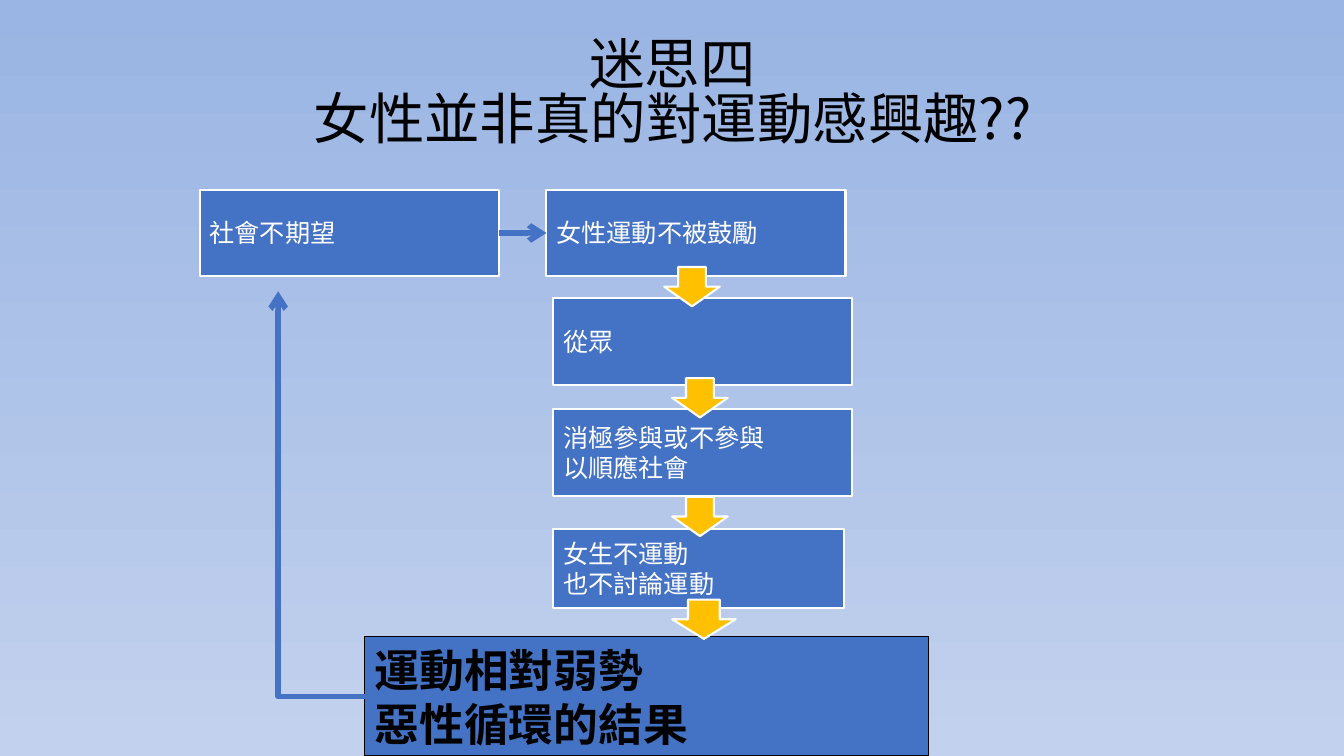
import pptx
import pptx.util
import pptx.dml.color
import pptx.enum.shapes
import pptx.enum.text
import pptx.oxml.ns
import lxml.etree

Cm = pptx.util.Cm
Pt = pptx.util.Pt
RGBColor = pptx.dml.color.RGBColor
Shape = pptx.enum.shapes.MSO_SHAPE
Connector = pptx.enum.shapes.MSO_CONNECTOR
Align = pptx.enum.text.PP_ALIGN
Anchor = pptx.enum.text.MSO_ANCHOR
qn = pptx.oxml.ns.qn

SKY_TOP = RGBColor(0x9A, 0xB5, 0xE4)
SKY_BOTTOM = RGBColor(0xC2, 0xD1, 0xED)
BLUE = RGBColor(0x44, 0x72, 0xC4)
GOLD = RGBColor(0xFF, 0xC0, 0x00)
WHITE = RGBColor(0xFF, 0xFF, 0xFF)
BLACK = RGBColor(0x00, 0x00, 0x00)

TITLE_BOX = (4.29, 0.76, 25.32, 3.3)
CAUSE_BOX = (5.03, 4.78, 7.54, 2.18)
RESULT_BOX = (9.19, 16.05, 14.2, 3)
CHAIN = [
    ((13.77, 4.78, 7.54, 2.18), ["女性運動不被鼓勵"]),
    ((13.94, 7.52, 7.54, 2.18), ["從眾"]),
    ((13.94, 10.31, 7.54, 2.18), ["消極參與或不參與", "以順應社會"]),
    ((13.94, 13.34, 7.34, 1.98), ["女生不運動", "也不討論運動"]),
]
ARROWS = [
    (16.74, 6.73, 1.4, 0.99),
    (16.94, 9.53, 1.4, 0.99),
    (16.94, 12.52, 1.4, 0.99),
    (16.94, 15.11, 1.6, 0.99),
]


def add_run(para, text, font_name, size, color, bold=False):
    span = para.add_run()
    span.text = text
    font = span.font
    font.name, font.size, font.bold = font_name, Pt(size), bold
    font.color.rgb = color
    east_asian = lxml.etree.Element(qn("a:ea"), typeface=font_name)
    font._element.find(qn("a:latin")).addnext(east_asian)


def add_block(page, kind, box, fill, line, width):
    block = page.shapes.add_shape(kind, *map(Cm, box))
    block.shadow.inherit = False
    block.fill.solid()
    block.fill.fore_color.rgb = fill
    block.line.color.rgb = line
    block.line.width = Pt(width)
    return block


def add_step(page, box, lines, line=WHITE, width=1.5,
             font_name="Calibri", size=18, color=WHITE, bold=False):
    step = add_block(page, Shape.RECTANGLE, box, BLUE, line, width)
    frame = step.text_frame
    frame.word_wrap = True
    frame.vertical_anchor = Anchor.MIDDLE
    for index, text in enumerate(lines):
        para = frame.add_paragraph() if index else frame.paragraphs[0]
        para.alignment = Align.LEFT
        add_run(para, text, font_name, size, color, bold)
    return step


def add_link(page, kind, start, end):
    link = page.shapes.add_connector(kind, *start, *end)
    link.line.color.rgb = BLUE
    link.line.width = Pt(4)
    outline = link.line._get_or_add_ln()
    lxml.etree.SubElement(outline, qn("a:tailEnd"), type="arrow")
    lxml.etree.SubElement(link._element.spPr, qn("a:effectLst"))
    return link


def add_title(page, box):
    title = page.shapes.add_textbox(*map(Cm, box))
    frame = title.text_frame
    frame.word_wrap = True
    frame.vertical_anchor = Anchor.MIDDLE
    para = frame.paragraphs[0]
    para.alignment = Align.CENTER
    para.line_spacing = 0.82
    add_run(para, "迷思四", "Noto Sans CJK SC", 39.6, BLACK)
    para.add_line_break()
    add_run(para, "女性並非真的對運動感興趣??", "Noto Sans CJK SC", 39.6, BLACK)


def add_return_link(page, cause, result):
    left = cause.left + Cm(1.98)
    top = cause.top + cause.height + Cm(0.38)
    middle = result.top + result.height // 2
    link = add_link(page, Connector.ELBOW, (left, top), (result.left, middle))
    properties = link._element.spPr
    properties.find(qn("a:prstGeom")).set("prst", "bentConnector2")
    properties.find(qn("a:xfrm")).set("rot", "10800000")


def add_cycle(page):
    result = add_step(page, RESULT_BOX, ["運動相對弱勢", "惡性循環的結果"],
                      BLACK, 0.75, "Lato", 32, BLACK, True)
    cause = add_step(page, CAUSE_BOX, ["社會不期望"])
    steps = [add_step(page, box, lines) for box, lines in CHAIN]
    for box in ARROWS:
        add_block(page, Shape.DOWN_ARROW, box, GOLD, WHITE, 1.5)
    add_return_link(page, cause, result)
    middle = cause.top + cause.height // 2
    forward = add_link(page, Connector.STRAIGHT,
                       (cause.left + cause.width, middle), (steps[0].left, middle))
    forward.begin_connect(cause, 3)
    forward.end_connect(steps[0], 1)


def paint_background(page):
    fill = page.background.fill
    fill.gradient()
    fill.gradient_angle = 270
    for stop, color in zip(fill.gradient_stops, (SKY_TOP, SKY_BOTTOM)):
        stop.color.rgb = color


def main():
    deck = pptx.Presentation()
    deck.slide_width, deck.slide_height = Cm(33.87), Cm(19.05)
    page = deck.slides.add_slide(deck.slide_layouts[6])
    paint_background(page)
    add_title(page, TITLE_BOX)
    add_cycle(page)
    deck.save("out.pptx")


if __name__ == "__main__":
    main()
